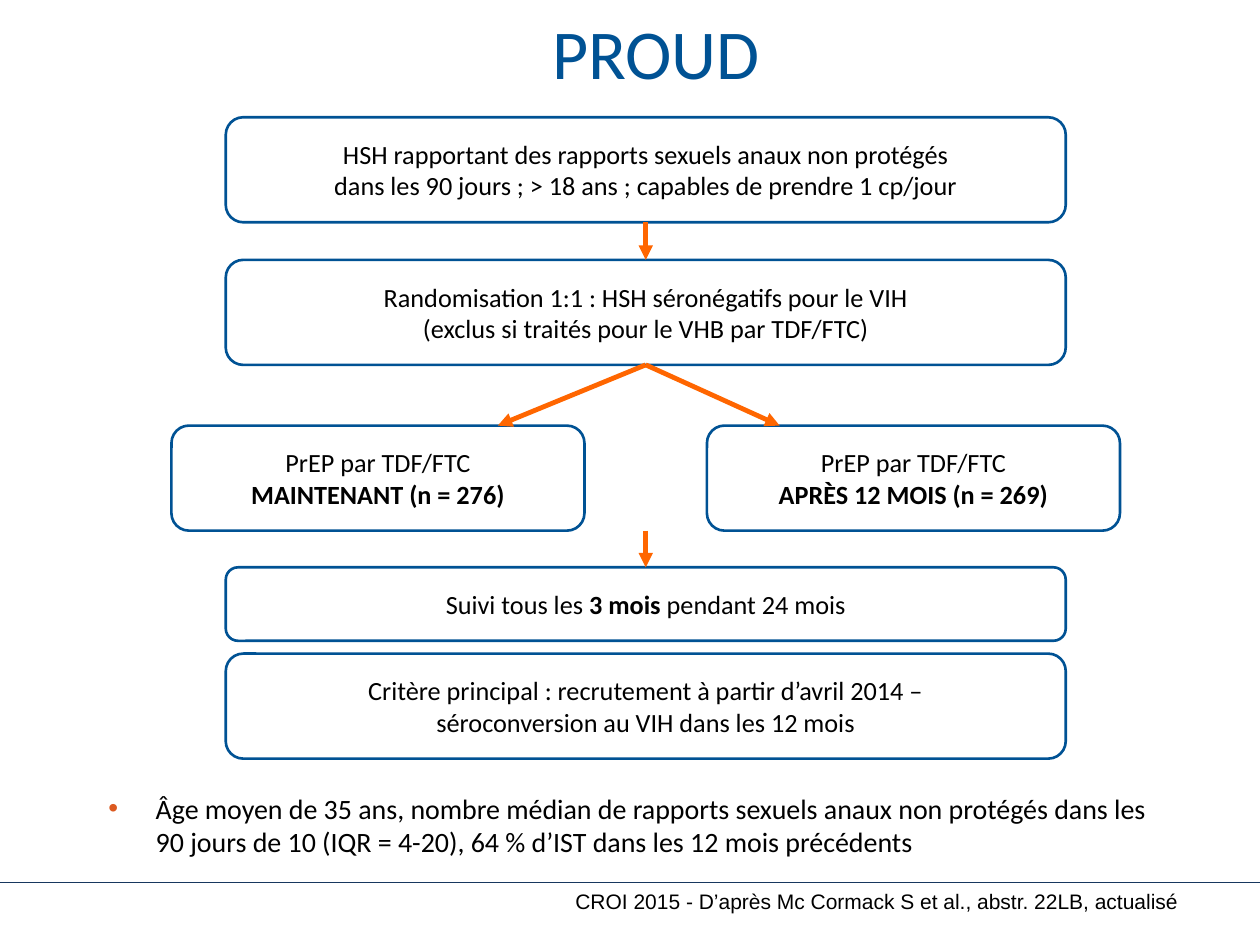
from copy import deepcopy
from lxml import etree
from pptx import Presentation
from pptx.dml.color import RGBColor
from pptx.enum.shapes import MSO_CONNECTOR, MSO_SHAPE
from pptx.enum.text import MSO_ANCHOR, PP_ALIGN
from pptx.oxml.ns import qn
from pptx.util import Pt

LINE = MSO_CONNECTOR.STRAIGHT
ROUND = MSO_SHAPE.ROUNDED_RECTANGLE
MID, TOP = MSO_ANCHOR.MIDDLE, MSO_ANCHOR.TOP
LEFT, CENTER, RIGHT = PP_ALIGN.LEFT, PP_ALIGN.CENTER, PP_ALIGN.RIGHT
COLORS = {"blue": "005294", "orange": "FF6600", "bullet": "DC5A20",
          "rule": "17375E", "black": "000000", "white": "FFFFFF"}


def color(name):
    return RGBColor.from_string(COLORS[name])


def write(shape, text, size=15, font="Calibri", ink="black", align=CENTER,
          anchor=MID, inset=None):
    frame = shape.text_frame
    frame.word_wrap = True
    frame.vertical_anchor = anchor
    if inset is not None:
        frame.margin_left = frame.margin_right = Pt(inset)
        frame.margin_top = frame.margin_bottom = Pt(inset)
    for i, part in enumerate(text.split("|")):
        para = frame.add_paragraph() if i else frame.paragraphs[0]
        para.alignment = align
        for j, chunk in enumerate(part.split("*")):
            for k, line in enumerate(chunk.split("\n")):
                if not line:
                    continue
                if k:
                    para.add_line_break()
                    para._p[-1].append(deepcopy(run._r.rPr))
                run = para.add_run()
                run.text = line
                run.font.size = Pt(size)
                run.font.name = font
                run.font.bold = j % 2 == 1
                run.font.color.rgb = color(ink)
    return frame.paragraphs[0]


prs = Presentation()
prs.slide_width, prs.slide_height = Pt(720), Pt(540)
slide = prs.slides.add_slide(prs.slide_layouts[6])
shapes = slide.shapes

rule = shapes.add_connector(LINE, Pt(0), Pt(504), Pt(721.5), Pt(504))
rule.line.color.rgb = color("rule")
rule.line.width = Pt(0.25)
etree.SubElement(rule._element.spPr, qn("a:effectLst"))

note = shapes.add_textbox(Pt(62), Pt(452.2), Pt(600.5), Pt(52))
para = write(note, "Âge moyen de 35 ans, nombre médian de rapports sexuels anaux non protégés "
             "dans les 90 jours de 10 (IQR = 4-20), 64 % d’IST dans les 12 mois précédents",
             size=16, align=LEFT, anchor=TOP, inset=0)
para.space_before = Pt(3.2)
props = para._p.get_or_add_pPr()
props.set("marL", str(Pt(27)))
props.set("indent", str(-Pt(27)))
tint = etree.SubElement(props, qn("a:buClr"))
etree.SubElement(tint, qn("a:srgbClr"), val=COLORS["bullet"])
etree.SubElement(props, qn("a:buFont"), typeface="Arial")
etree.SubElement(props, qn("a:buChar"), char="•")

title = shapes.add_textbox(Pt(83.5), Pt(18.7), Pt(582.5), Pt(47.5))
para = write(title, "PROUD", size=40, ink="blue", inset=0)
para.line_spacing = Pt(22)

steps = [
    (129, 67, 480, 60, "HSH rapportant des rapports sexuels anaux non protégés\n"
     "dans les 90 jours ; > 18 ans ; capables de prendre 1 cp/jour"),
    (129, 148.5, 480, 60, "Randomisation 1:1 : HSH séronégatifs pour le VIH\n"
     "(exclus si traités pour le VHB par TDF/FTC)"),
    (98, 243.2, 236, 60, "PrEP par TDF/FTC|*MAINTENANT (n = 276)*"),
    (404, 243.2, 236, 60, "PrEP par TDF/FTC|*APRÈS 12 MOIS (n = 269)*"),
    (129, 324.2, 480, 42, "Suivi tous les *3 mois *pendant 24 mois"),
    (129, 373.5, 480, 60, "Critère principal : recrutement à partir d’avril 2014 –\n"
     "séroconversion au VIH dans les 12 mois"),
]
boxes = []
for x, y, w, h, text in steps:
    box = shapes.add_shape(ROUND, Pt(x), Pt(y), Pt(w), Pt(h))
    box.shadow.inherit = False
    box.fill.solid()
    box.fill.fore_color.rgb = color("white")
    box.line.color.rgb = color("blue")
    box.line.width = Pt(1.5)
    write(box, text)
    boxes.append(box)

entry, draw, now, later, visit, goal = boxes
arrows = [
    (369, 127, 369, 148.5, entry, draw),
    (369, 208.5, 284.5, 243.2, draw, None),
    (369, 208.5, 445.5, 243.2, draw, None),
    (369, 303.2, 369, 324.2, None, visit),
]
for x1, y1, x2, y2, start, end in arrows:
    arrow = shapes.add_connector(LINE, Pt(x1), Pt(y1), Pt(x2), Pt(y2))
    if start:
        arrow.begin_connect(start, 2)
    if end:
        arrow.end_connect(end, 0)
    arrow.line.color.rgb = color("orange")
    arrow.line.width = Pt(2.75)
    etree.SubElement(arrow.line._get_or_add_ln(), qn("a:tailEnd"), type="triangle")
    etree.SubElement(arrow._element.spPr, qn("a:effectLst"))

source = shapes.add_textbox(Pt(254), Pt(504), Pt(430), Pt(36))
write(source, "CROI 2015 - D’après Mc Cormack S et al., abstr. 22LB, actualisé ",
      size=12, font="Arial", align=RIGHT, anchor=TOP)

prs.save("out.pptx")
